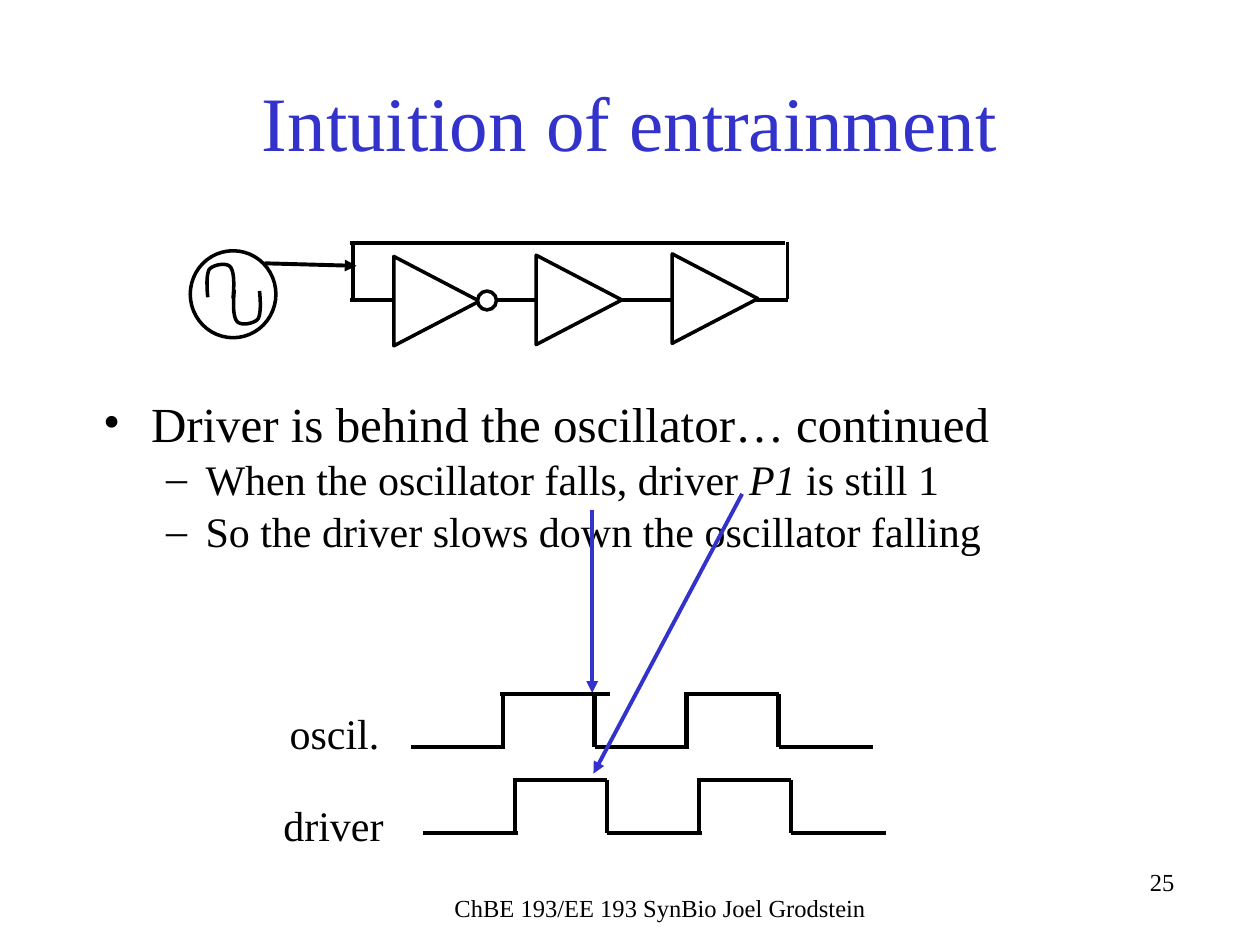
import dataclasses
import typing

import pptx
import pptx.dml.color
import pptx.enum.shapes
import pptx.enum.text
import pptx.oxml.ns
import pptx.util
from lxml import etree

CELL = 0.25  # inches; the slide is 40 columns by 30 rows
FONT = "Times New Roman"
HUES = {"ink": "000000", "blue": "3333CC", "paper": "FFFFFF"}
ALIGN = pptx.enum.text.PP_ALIGN
SHAPE = pptx.enum.shapes.MSO_SHAPE
Point = tuple[float, float]


@dataclasses.dataclass
class Box:
    col: float
    row: float
    cols: float
    rows: float

    def emu(self) -> list[int]:
        return [size(n) for n in (self.col, self.row, self.cols, self.rows)]


@dataclasses.dataclass
class Wire:
    start: Point
    end: Point
    hue: str = "ink"
    width: float = 2.25
    arrow: bool = False


@dataclasses.dataclass
class Wave:
    name: str
    label: Box
    left: float
    top: float


@dataclasses.dataclass
class Item:
    runs: list[tuple[str, bool]]
    pts: int
    mark: str
    left: float
    hang: float
    gap: float


def size(cells: float) -> int:
    return pptx.util.Inches(cells * CELL)


def color(hue: str) -> pptx.dml.color.RGBColor:
    return pptx.dml.color.RGBColor.from_string(HUES[hue])


def add_sub(node: typing.Any, tag: str, **attrs: str) -> None:
    etree.SubElement(node, pptx.oxml.ns.qn(tag), attrs)


def put_run(para: typing.Any, text: str, *, pts: int = 24, hue: str = "ink",
            italic: bool = False) -> None:
    run = para.add_run()
    run.text = text
    run.font.name = FONT
    run.font.size = pptx.util.Pt(pts)
    run.font.italic = italic
    run.font.color.rgb = color(hue)


def put_text(slide: typing.Any, box: Box, text: str = "", *,
             align: typing.Any = ALIGN.LEFT, **look: typing.Any) -> typing.Any:
    frame = slide.shapes.add_textbox(*box.emu()).text_frame
    frame.word_wrap = True
    para = frame.paragraphs[0]
    para.alignment = align
    if text:
        put_run(para, text, **look)
    return frame


def put_title(slide: typing.Any, box: Box, text: str) -> None:
    title = slide.shapes.title
    title.left, title.top, title.width, title.height = box.emu()
    title.text_frame.vertical_anchor = pptx.enum.text.MSO_ANCHOR.MIDDLE
    para = title.text_frame.paragraphs[0]
    para.alignment = ALIGN.CENTER
    put_run(para, text, pts=44, hue="blue")


def put_list(slide: typing.Any, box: Box, items: list[Item]) -> None:
    frame = put_text(slide, box)
    for i, item in enumerate(items):
        para = frame.add_paragraph() if i else frame.paragraphs[0]
        para.space_before = pptx.util.Pt(item.gap)
        props = para._p.get_or_add_pPr()
        props.set("marL", str(size(item.left)))
        props.set("indent", str(-size(item.hang)))
        add_sub(props, "a:buFont", typeface=FONT)
        add_sub(props, "a:buChar", char=item.mark)
        for text, italic in item.runs:
            put_run(para, text, pts=item.pts, italic=italic)


def put_wire(slide: typing.Any, wire: Wire) -> None:
    ends = [size(n) for n in (*wire.start, *wire.end)]
    kind = pptx.enum.shapes.MSO_CONNECTOR.STRAIGHT
    line = slide.shapes.add_connector(kind, *ends)
    line.line.color.rgb = color(wire.hue)
    line.line.width = pptx.util.Pt(wire.width)
    if wire.arrow:
        add_sub(line.line._get_or_add_ln(), "a:tailEnd", type="triangle")
    add_sub(line._element.spPr, "a:effectLst")


def style(shape: typing.Any, fill: bool) -> None:
    shape.shadow.inherit = False
    if fill:
        shape.fill.solid()
        shape.fill.fore_color.rgb = color("paper")
    else:
        shape.fill.background()
    shape.line.color.rgb = color("ink")
    shape.line.width = pptx.util.Pt(2)


def put_shape(slide: typing.Any, kind: typing.Any, box: Box, *,
              turn: float = 0, fill: bool = True) -> None:
    shape = slide.shapes.add_shape(kind, *box.emu())
    shape.rotation = turn
    style(shape, fill)


def bend(a: Point, b: Point, c: Point, d: Point, steps: int = 10) -> list[Point]:
    """Points on a cubic curve, without its start."""
    points = []
    for i in range(1, steps + 1):
        t = i / steps
        parts = ((1 - t) ** 3, 3 * t * (1 - t) ** 2, 3 * t * t * (1 - t), t ** 3)
        x, y = (sum(p * q[k] for p, q in zip(parts, (a, b, c, d))) for k in (0, 1))
        points.append((x, y))
    return points


def put_sine(slide: typing.Any, mid: Point) -> None:
    """Draw one hump and its half-turn about mid."""
    knots = [(-0.82, 0.1), (-0.86, -0.26), (-0.86, -0.62), (-0.78, -0.78),
             (-0.66, -0.94), (-0.22, -1.02), (-0.1, -0.86),
             (0.02, -0.7), (0.02, -0.3), (-0.02, 0.14)]
    hump = [knots[0]]
    for i in range(0, 9, 3):
        hump += bend(*knots[i:i + 4])
    for sign in (1, -1):
        path = [(size(mid[0] + sign * x), size(mid[1] + sign * y)) for x, y in hump]
        pen = slide.shapes.build_freeform(*path[0], scale=1.0)
        pen.add_line_segments(path[1:], close=False)
        style(pen.convert_to_shape(), False)


def put_wave(slide: typing.Any, wave: Wave) -> None:
    step, span, lead, rise = 2.92, 3, 0.08, 1.68
    low = wave.top + rise
    put_text(slide, wave.label, wave.name)
    for i in range(5):
        x = wave.left + i * step
        high = i % 2 == 1
        start, y = (x - lead, wave.top) if high else (x, low)
        put_wire(slide, Wire((start, y), (start + span, y), width=2.5))
        if i:
            put_wire(slide, Wire((x, wave.top), (x, low), width=2.5))


def main() -> None:
    deck = pptx.Presentation()
    deck.slide_width, deck.slide_height = size(40), size(30)
    slide = deck.slides.add_slide(deck.slide_layouts[5])

    put_title(slide, Box(3, 1.32, 34, 5), "Intuition of entrainment")
    put_list(slide, Box(2.88, 12.28, 35, 8.76), [
        Item([("Driver is behind the oscillator… continued", False)],
             28, "•", 1.52, 1.52, 3.4),
        Item([("When the oscillator falls, driver ", False), ("P1 ", True),
              ("is still 1", False)], 24, "–", 3.25, 1.25, 1),
        Item([("So the driver slows down the oscillator falling", False)],
             24, "–", 3.25, 1.25, 1),
    ])
    put_text(slide, Box(25, 27.32, 12.68, 2), "25", pts=14, align=ALIGN.RIGHT)
    put_text(slide, Box(13.72, 28.16, 14.48, 1.28),
             "ChBE 193/EE 193 SynBio Joel Grodstein", pts=14, align=ALIGN.CENTER)

    for start, end in [((11.12, 9.52), (25, 9.52)), ((25, 7.68), (25, 9.48)),
                       ((11.2, 7.64), (11.2, 9.52)), ((11.12, 7.72), (24.92, 7.72))]:
        put_wire(slide, Wire(start, end))
    for col, row in [(12.44, 8.2), (16.96, 8.16), (21.28, 8.12)]:
        put_shape(slide, SHAPE.FLOWCHART_MERGE, Box(col, row, 2.84, 2.72), turn=270)
    put_shape(slide, SHAPE.OVAL, Box(15.16, 9.24, 0.6, 0.6))

    put_sine(slide, (7.42, 9.34))
    put_shape(slide, SHAPE.OVAL, Box(6.04, 7.96, 2.72, 2.76), fill=False)
    put_wire(slide, Wire((8.4, 8.36), (11.32, 8.44), arrow=True))

    for wave in [Wave("oscil.", Box(8.8, 22.28, 3.96, 2), 13.04, 22.04),
                 Wave("driver", Box(8.6, 25.2, 4.52, 2), 13.44, 24.76)]:
        put_wave(slide, wave)
    for start, end in [((18.8, 16.2), (18.8, 22)), ((23.56, 15.68), (18.84, 24.56))]:
        put_wire(slide, Wire(start, end, hue="blue", arrow=True))
    put_wire(slide, Wire((15.96, 22.04), (19.36, 22.04), width=2.5))

    deck.save("out.pptx")


if __name__ == "__main__":
    main()
